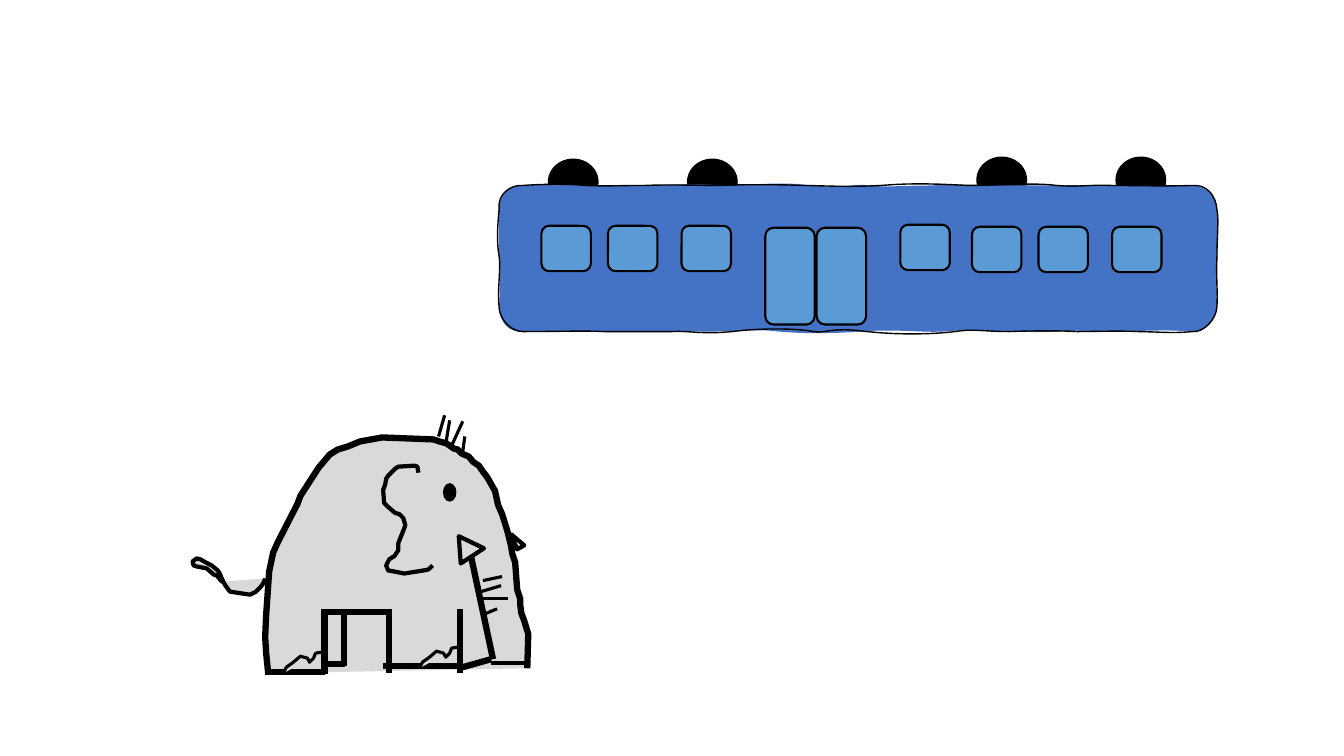
"""Draw an upturned blue bus above a grey elephant."""
from dataclasses import dataclass

from lxml import etree
from pptx import Presentation
from pptx.dml.color import RGBColor
from pptx.enum.shapes import MSO_CONNECTOR, MSO_SHAPE
from pptx.oxml.ns import qn
from pptx.util import Inches, Pt

OVAL = MSO_SHAPE.OVAL
ROUND = MSO_SHAPE.ROUNDED_RECTANGLE
STRAIGHT = MSO_CONNECTOR.STRAIGHT


@dataclass(frozen=True)
class Theme:
    ink: str = "000000"
    bus: str = "4472C4"
    glass: str = "5B9BD5"
    skin: str = "D9D9D9"
    hair: float = 1
    thin: float = 1.5
    mid: float = 2.25
    bold: float = 3
    heavy: float = 4.5


class Artist:
    def __init__(self, slide, theme):
        self.slide = slide
        self.theme = theme
        self.shapes = slide.shapes

    def group(self):
        self.shapes = self.slide.shapes.add_group_shape().shapes

    def paint(self, shape, fill, width):
        shape.shadow.inherit = False
        if fill:
            shape.fill.solid()
            shape.fill.fore_color.rgb = RGBColor.from_string(fill)
        else:
            shape.fill.background()
        if width:
            self.stroke(shape.line, width)
        else:
            shape.line.fill.background()

    def stroke(self, line, width):
        line.color.rgb = RGBColor.from_string(self.theme.ink)
        line.width = Pt(width)

    def preset(self, kind, box, fill, width):
        shape = self.shapes.add_shape(kind, *map(Inches, box))
        self.paint(shape, fill, width)

    def free(self, points, fill, width, close=False):
        first, *rest = [(Inches(x), Inches(y)) for x, y in points]
        pen = self.shapes.build_freeform(*first, scale=1.0)
        pen.add_line_segments(rest, close=close)
        self.paint(pen.convert_to_shape(), fill, width)

    def line(self, ends, width):
        link = self.shapes.add_connector(STRAIGHT, *map(Inches, ends))
        self.stroke(link.line, width)
        etree.SubElement(link._element.spPr, qn("a:effectLst"))


def bend(start, curves, steps=8):
    """Return points along a chain of cubic curves."""
    points = [start]
    for ax, ay, bx, by, cx, cy in curves:
        px, py = points[-1]
        for step in range(1, steps + 1):
            t = step / steps
            u = 1 - t
            k = (u ** 3, 3 * u * u * t, 3 * u * t * t, t ** 3)
            points.append((sum(a * b for a, b in zip(k, (px, ax, bx, cx))),
                           sum(a * b for a, b in zip(k, (py, ay, by, cy)))))
    return points


CORNER = (4.95, 2.08)
EDGE = [
    (4.93, 1.92, 5.07, 1.83, 5.19, 1.84), (5.32, 1.83, 5.61, 1.82, 5.8, 1.84),
    (5.98, 1.85, 6.18, 1.84, 6.4, 1.84), (6.62, 1.83, 6.92, 1.84, 7.14, 1.84),
    (7.36, 1.83, 7.75, 1.83, 7.94, 1.84), (8.13, 1.84, 8.39, 1.86, 8.74, 1.84),
    (9.09, 1.81, 9.35, 1.83, 9.61, 1.84), (9.88, 1.84, 10.28, 1.81, 10.48, 1.84),
    (10.68, 1.86, 10.82, 1.83, 11.02, 1.84), (11.23, 1.84, 11.59, 1.85, 11.83, 1.84),
    (11.97, 1.83, 12.06, 1.94, 12.07, 2.08), (12.09, 2.18, 12.07, 2.36, 12.07, 2.55),
    (12.06, 2.74, 12.08, 2.93, 12.07, 3.04), (12.07, 3.16, 11.94, 3.3, 11.83, 3.29),
    (11.62, 3.31, 11.46, 3.29, 11.29, 3.29), (11.11, 3.28, 10.82, 3.29, 10.68, 3.29),
    (10.54, 3.28, 10.25, 3.28, 10.01, 3.29), (9.77, 3.29, 9.64, 3.26, 9.47, 3.29),
    (9.31, 3.31, 8.97, 3.33, 8.6, 3.29), (8.24, 3.24, 8.2, 3.31, 8.07, 3.29),
    (7.93, 3.26, 7.56, 3.25, 7.26, 3.29), (6.97, 3.32, 6.84, 3.28, 6.66, 3.29),
    (6.48, 3.29, 6.13, 3.29, 5.99, 3.29), (5.84, 3.28, 5.45, 3.29, 5.19, 3.29),
    (5.07, 3.29, 4.95, 3.17, 4.95, 3.04), (4.93, 2.91, 4.97, 2.65, 4.95, 2.54),
    (4.93, 2.43, 4.93, 2.28, 4.95, 2.08)]
PANEL = [
    (4.95, 1.94, 5.04, 1.83, 5.19, 1.84), (5.49, 1.82, 5.58, 1.83, 5.86, 1.84),
    (6.15, 1.84, 6.33, 1.84, 6.47, 1.84), (6.61, 1.83, 6.95, 1.82, 7.2, 1.84),
    (7.46, 1.85, 7.66, 1.79, 8.07, 1.84), (8.49, 1.88, 8.42, 1.81, 8.61, 1.84),
    (8.8, 1.86, 8.96, 1.84, 9.22, 1.84), (9.47, 1.83, 9.56, 1.83, 9.75, 1.84),
    (9.95, 1.84, 10.13, 1.84, 10.36, 1.84), (10.59, 1.83, 10.8, 1.84, 10.96, 1.84),
    (11.12, 1.83, 11.62, 1.85, 11.83, 1.84), (11.96, 1.85, 12.08, 1.95, 12.07, 2.08),
    (12.08, 2.28, 12.08, 2.42, 12.07, 2.57), (12.05, 2.72, 12.07, 2.86, 12.07, 3.04),
    (12.06, 3.17, 11.96, 3.3, 11.83, 3.29), (11.62, 3.27, 11.38, 3.28, 11.09, 3.29),
    (10.8, 3.29, 10.69, 3.27, 10.48, 3.29), (10.27, 3.3, 10.2, 3.29, 9.95, 3.29),
    (9.69, 3.28, 9.55, 3.27, 9.34, 3.29), (9.13, 3.3, 8.84, 3.26, 8.54, 3.29),
    (8.24, 3.31, 7.95, 3.31, 7.73, 3.29), (7.51, 3.26, 7.33, 3.29, 7, 3.29),
    (6.67, 3.28, 6.58, 3.29, 6.19, 3.29), (5.8, 3.28, 5.45, 3.3, 5.19, 3.29),
    (5.04, 3.3, 4.96, 3.2, 4.95, 3.04), (4.96, 2.89, 4.96, 2.69, 4.95, 2.55),
    (4.95, 2.41, 4.95, 2.29, 4.95, 2.08)]
TORSO = [
    (2.66, 6.68), (2.64, 6.48), (2.63, 6.32), (2.64, 6.1), (2.67, 5.67),
    (2.71, 5.48), (2.76, 5.37), (2.95, 5), (2.98, 4.92), (3.16, 4.64),
    (3.27, 4.51), (3.35, 4.46), (3.45, 4.43), (3.57, 4.38), (3.79, 4.34),
    (4.3, 4.36), (4.36, 4.38), (4.43, 4.4), (4.5, 4.45), (4.54, 4.46),
    (4.58, 4.5), (4.65, 4.53), (4.69, 4.58), (4.75, 4.62), (4.79, 4.68),
    (4.83, 4.73), (4.91, 4.87), (4.94, 5.01), (4.98, 5.1), (5.03, 5.26),
    (5.07, 5.42), (5.08, 5.49), (5.11, 5.58), (5.12, 5.72), (5.13, 5.85),
    (5.16, 5.94), (5.16, 6), (5.17, 6.08), (5.2, 6.16), (5.24, 6.29),
    (5.23, 6.63)]
EAR = [
    (4.15, 4.69), (4.14, 4.63), (4.11, 4.62), (3.95, 4.63), (3.92, 4.65),
    (3.85, 4.72), (3.83, 4.75), (3.82, 4.81), (3.8, 4.86), (3.81, 4.99),
    (3.85, 5.03), (3.92, 5.09), (3.96, 5.1), (4, 5.14), (4.02, 5.21),
    (4.01, 5.24), (3.95, 5.39), (3.95, 5.46), (3.91, 5.52), (3.89, 5.53),
    (3.86, 5.55), (3.83, 5.61), (3.85, 5.66), (3.91, 5.67), (4.01, 5.69),
    (4.2, 5.66), (4.25, 5.65), (4.29, 5.61)]
TAIL = [
    (2.63, 5.74), (2.61, 5.79), (2.58, 5.83), (2.54, 5.87), (2.48, 5.9),
    (2.28, 5.87), (2.23, 5.8), (2.2, 5.74), (2.18, 5.69), (2.16, 5.66),
    (2.1, 5.61), (2.04, 5.58), (1.99, 5.55), (1.95, 5.54), (1.91, 5.57),
    (1.92, 5.61), (1.95, 5.62), (2.05, 5.64), (2.12, 5.7), (2.15, 5.71),
    (2.2, 5.77), (2.23, 5.77)]
TOES = [
    (0, 0.21), (0.03, 0.15), (0.1, 0.1), (0.17, 0.04), (0.24, 0.06),
    (0.26, 0.1), (0.3, 0.06), (0.32, 0.01), (0.38, 0)]
LEGS = [
    (3.22, 6.05, 3.22, 6.69), (3.86, 6.04, 3.86, 6.68), (4.56, 6.04, 4.56, 6.68),
    (2.63, 6.67, 3.22, 6.67), (4.56, 6.61, 3.8, 6.61), (3.86, 6.07, 3.18, 6.07),
    (3.41, 6.07, 3.41, 6.61), (3.22, 6.59, 3.42, 6.59), (4.87, 6.54, 4.55, 6.63),
    (4.67, 5.51, 4.89, 6.54)]
HAIRS = [
    (4.41, 4.12, 4.35, 4.33), (4.46, 4.17, 4.42, 4.41), (4.59, 4.18, 4.48, 4.42),
    (4.61, 4.33, 4.59, 4.48), (4.98, 5.72, 4.79, 5.76), (4.97, 5.81, 4.77, 5.87),
    (5.04, 5.94, 4.79, 5.94), (4.93, 6.04, 4.81, 6.09)]


def draw_bus(art):
    look = art.theme
    art.group()
    for left, top in ((9.69, 1.56), (5.44, 1.58)):
        for gap in (1.38, 0):
            art.preset(OVAL, (left + gap, top, 0.49, 0.45), look.ink, look.hair)
    art.free(bend(CORNER, PANEL), look.bus, None, True)
    art.free(bend(CORNER, EDGE), None, look.hair, True)
    panes = [(left + gap, top, 0.45) for left, top in ((5.37, 2.24), (9.64, 2.25))
             for gap in (0, 0.66, 1.39)]
    doors = [(7.59, 2.26, 0.96), (8.1, 2.26, 0.96)]
    for left, top, high in panes + doors + [(8.93, 2.23, 0.45)]:
        art.preset(ROUND, (left, top, 0.49, high), look.glass, look.thin)


def draw_beast(art):
    look = art.theme
    art.group()
    art.free([(5.13, 5.45), (5.07, 5.3), (5.2, 5.41)], look.skin, look.bold, True)
    art.free(TORSO, look.skin, look.heavy)
    for ends in LEGS:
        art.line(ends, look.heavy)
    art.line((5.22, 6.58, 4.87, 6.58), look.bold)
    art.free(EAR, look.skin, look.bold)
    art.free([(4.57, 5.59), (4.55, 5.32), (4.8, 5.44)], look.skin, look.bold, True)
    art.preset(OVAL, (4.4, 4.8, 0.12, 0.17), look.ink, look.hair)
    for left, top in ((2.81, 6.47), (4.16, 6.42)):
        art.free([(left + x, top + y) for x, y in TOES], look.skin, look.mid)
    art.free(TAIL, look.skin, look.bold)
    for ends in HAIRS:
        art.line(ends, look.mid)


def main():
    deck = Presentation()
    deck.slide_width, deck.slide_height = Inches(13.33), Inches(7.5)
    art = Artist(deck.slides.add_slide(deck.slide_layouts[6]), Theme())
    draw_bus(art)
    draw_beast(art)
    deck.save("out.pptx")


if __name__ == "__main__":
    main()
